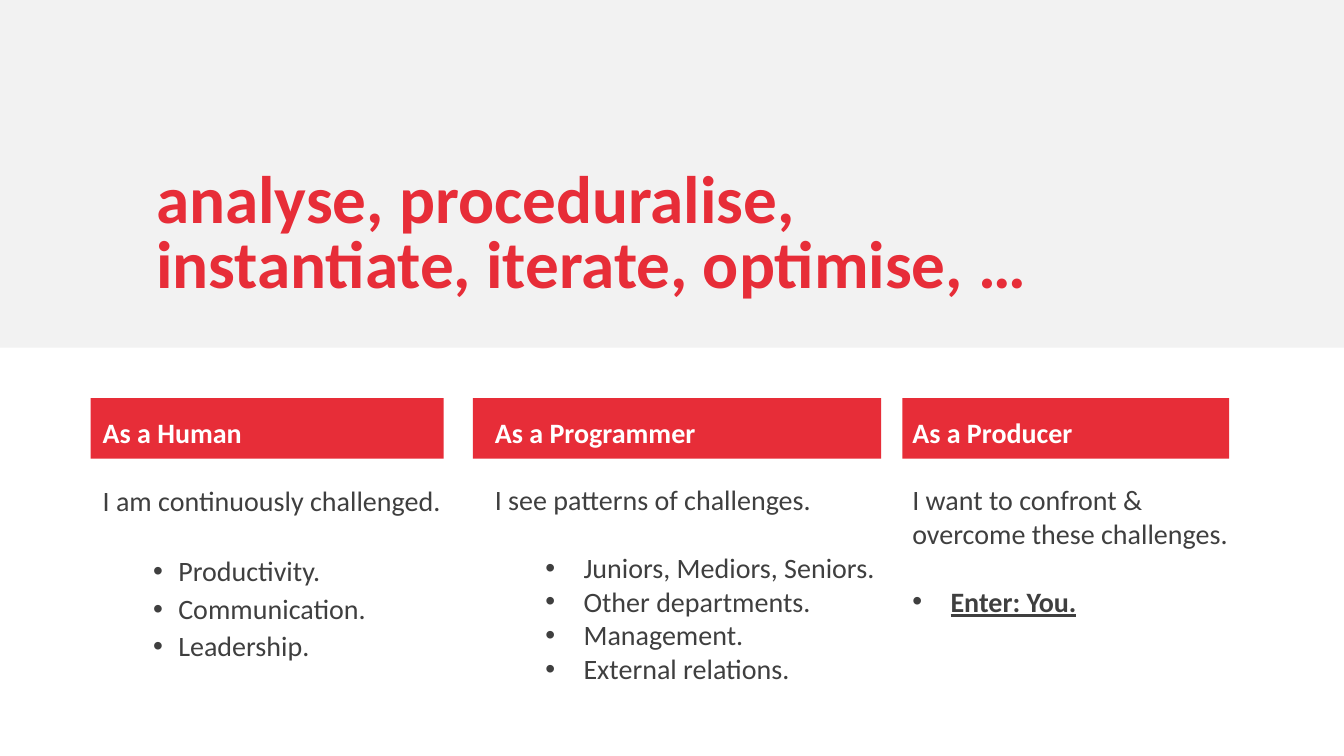
import pptx
import pptx.dml.color
import pptx.enum.shapes
import pptx.oxml.ns
import pptx.util
from lxml import etree

Inches = pptx.util.Inches
Pt = pptx.util.Pt
RGBColor = pptx.dml.color.RGBColor

RED = RGBColor(0xE7, 0x2D, 0x38)
GREY = RGBColor(0xF2, 0xF2, 0xF2)
DARK = RGBColor(0x3F, 0x3F, 0x3F)
WHITE = RGBColor(0xFF, 0xFF, 0xFF)

GAP = 24.4  # one line of 20 pt text


class Deck:
    """Holds the style and the current slide."""

    def __init__(self):
        self.show = pptx.Presentation()
        self.show.slide_width = Inches(13.33)
        self.show.slide_height = Inches(7.5)
        self.slide = self.show.slides.add_slide(self.show.slide_layouts[6])
        self.font = "Calibri"

    def block(self, left, top, width, height, fill):
        kind = pptx.enum.shapes.MSO_SHAPE.RECTANGLE
        box = self.slide.shapes.add_shape(
            kind, Inches(left), Inches(top), Inches(width), Inches(height))
        box.shadow.inherit = False
        box.fill.solid()
        box.fill.fore_color.rgb = fill
        box.line.fill.background()

    def text(self, left, top, width, height):
        box = self.slide.shapes.add_textbox(
            Inches(left), Inches(top), Inches(width), Inches(height))
        box.text_frame.word_wrap = True
        return box.text_frame

    def para(self, frame, first=False, before=0, line=1.0):
        para = frame.paragraphs[0] if first else frame.add_paragraph()
        para.space_before = Pt(before)
        para.line_spacing = line
        return para

    def run(self, para, words, color, size=20, bold=False, under=False):
        run = para.add_run()
        run.text = words
        font = run.font
        font.name, font.size, font.bold = self.font, Pt(size), bold
        font.color.rgb = color
        if under:
            font.underline = True

    def bullet(self, para, left, hang, level):
        para.level = level
        props = para._p.get_or_add_pPr()
        props.set("marL", str(Inches(left)))
        props.set("indent", str(-Inches(hang)))
        qn = pptx.oxml.ns.qn
        tint = etree.SubElement(props, qn("a:buClr"))
        etree.SubElement(tint, qn("a:srgbClr"), val=str(DARK))
        etree.SubElement(props, qn("a:buFont"), typeface="Arial")
        etree.SubElement(props, qn("a:buChar"), char="•")


deck = Deck()

# Title band
deck.block(0, 0, 13.33, 3.45, GREY)
title = deck.para(deck.text(1.45, 1.66, 10.07, 1.39), first=True, line=0.8)
deck.run(title, "analyse, proceduralise,", RED, 48, bold=True)
title.add_line_break()
deck.run(title, "instantiate, iterate, optimise, …", RED, 48, bold=True)

# Columns: bar (left, width), text box (left, width, height), heading, claim,
# bullets (left, hang, level, space before, line spacing, bold), items
columns = [
    ((0.9, 3.5), (0.92, 3.68, 2.88), "As a Human",
     "I am continuously challenged.", (0.75, 0.25, 1, 5, 0.9, False),
     ["Productivity.", "Communication.", "Leadership."]),
    ((4.69, 4.05), (4.81, 4.14, 3.13), "As a Programmer",
     "I see patterns of challenges.", (0.88, 0.38, 1, 0, 1.0, False),
     ["Juniors, Mediors, Seniors.", "Other departments.", "Management.",
      "External relations."]),
    ((8.95, 3.24), (8.95, 3.53, 2.46), "As a Producer",
     "I want to confront & overcome these challenges.",
     (0.38, 0.38, 0, 0, 1.0, True), ["Enter: You."]),
]

for bar, box, head, claim, style, items in columns:
    deck.block(bar[0], 3.95, bar[1], 0.6, RED)
    frame = deck.text(box[0], 4.07, box[1], box[2])
    deck.run(deck.para(frame, first=True), head, WHITE, bold=True)
    deck.run(deck.para(frame, before=GAP), claim, DARK)

    # Bullets, the first one set off by a line
    left, hang, level, space, line, strong = style
    for spot, item in enumerate(items):
        para = deck.para(frame, before=space + (0 if spot else GAP), line=line)
        deck.bullet(para, left, hang, level)
        deck.run(para, item, DARK, bold=strong, under=strong)

deck.show.save("out.pptx")
